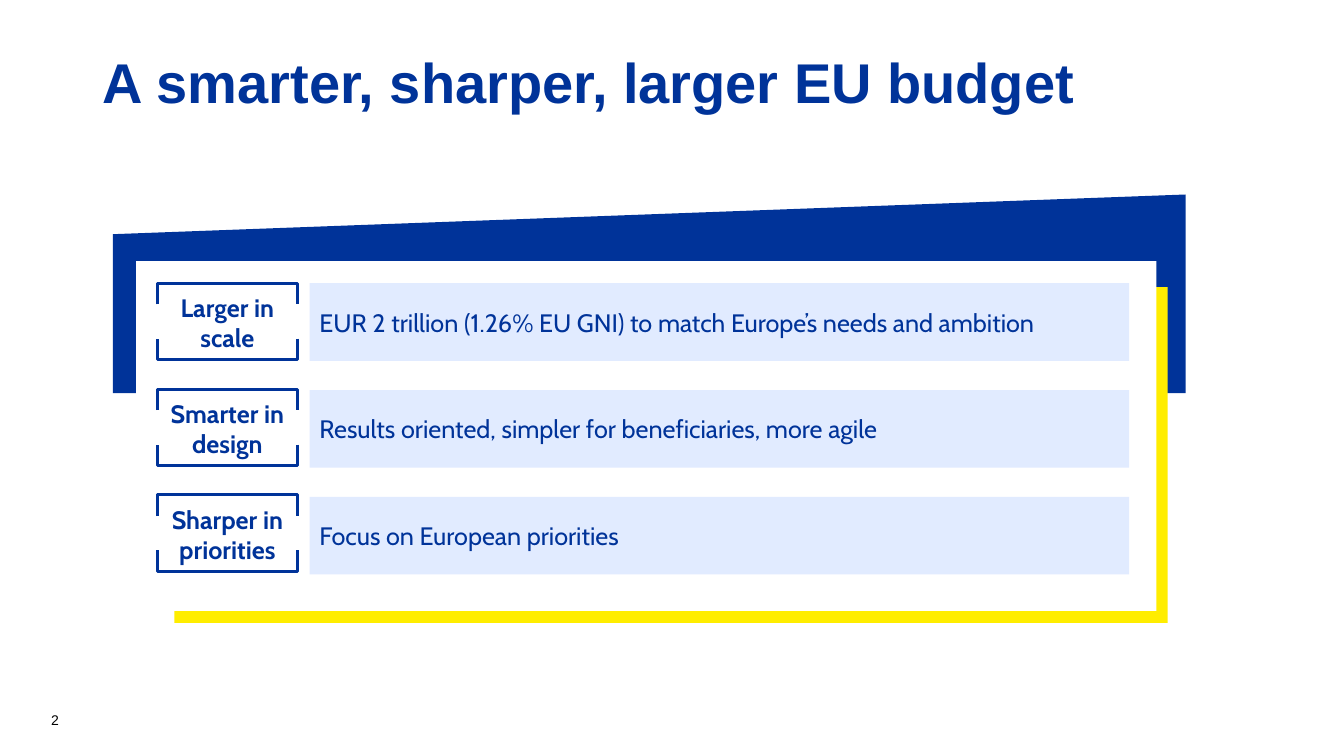
from pptx import Presentation
from pptx.dml.color import RGBColor
from pptx.enum.shapes import MSO_SHAPE
from pptx.enum.text import MSO_ANCHOR, PP_ALIGN
from pptx.util import Inches, Pt

COLORS = {
    "blue": "003399",
    "yellow": "FFED00",
    "white": "FFFFFF",
    "pale": "E1EBFF",
    "black": "000000",
}
ROWS = [
    ("Larger in scale", "EUR 2 trillion (1.26% EU GNI) to match Europe’s needs and ambition"),
    ("Smarter in design", "Results oriented, simpler for beneficiaries, more agile"),
    ("Sharper in priorities", "Focus on European priorities"),
]


def add_panel(kind, left, top, width, height, fill=None):
    panel = page.shapes.add_shape(kind, Inches(left), Inches(top), Inches(width), Inches(height))
    panel.shadow.inherit = False
    if fill:
        panel.fill.solid()
        panel.fill.fore_color.rgb = RGBColor.from_string(COLORS[fill])
        panel.line.fill.background()
    else:
        panel.fill.background()
        panel.line.color.rgb = RGBColor.from_string(COLORS["blue"])
        panel.line.width = Pt(2.25)
    return panel


def write(box, text, size, font, color, bold=False, align=PP_ALIGN.LEFT,
          anchor=MSO_ANCHOR.MIDDLE, side=0.1, edge=0.05):
    frame = box.text_frame
    frame.word_wrap = True
    frame.vertical_anchor = anchor
    frame.margin_left = frame.margin_right = Inches(side)
    frame.margin_top = frame.margin_bottom = Inches(edge)
    frame.text = text
    para = frame.paragraphs[0]
    para.alignment = align
    para.font.size = Pt(size)
    para.font.name = font
    para.font.bold = bold
    para.font.color.rgb = RGBColor.from_string(COLORS[color])
    return para


deck = Presentation()
deck.slide_width = Inches(13.33)
deck.slide_height = Inches(7.5)
page = deck.slides.add_slide(deck.slide_layouts[5])

title = page.shapes.title
title.left, title.top = Inches(0.92), Inches(0.4)
title.width, title.height = Inches(11.5), Inches(0.89)
heading = write(title, "A smarter, sharper, larger EU budget", 40, "Arial", "blue", bold=True)
heading.line_spacing = 0.9

add_panel(MSO_SHAPE.FLOWCHART_MANUAL_INPUT, 1.12, 1.93, 10.64, 1.97, "blue")
add_panel(MSO_SHAPE.RECTANGLE, 1.73, 2.85, 9.85, 3.33, "yellow")
add_panel(MSO_SHAPE.RECTANGLE, 1.35, 2.59, 10.12, 3.47, "white")

for index, (label, message) in enumerate(ROWS):
    bar = add_panel(MSO_SHAPE.RECTANGLE, 3.07, 2.81 + 1.06 * index, 8.13, 0.77, "pale")
    write(bar, message, 18, "Cabin", "blue", edge=0)

    offset = 1.05 * index
    box = page.shapes.add_textbox(Inches(1.56), Inches(2.85 + offset), Inches(1.39), Inches(0.67))
    write(box, label, 18, "Cabin", "blue", bold=True, align=PP_ALIGN.CENTER,
          anchor=MSO_ANCHOR.TOP, side=0)

    for top, rotation in ((2.77, 270), (2.22, 90)):
        bracket = add_panel(MSO_SHAPE.LEFT_BRACKET, 2.15, top + offset, 0.21, 1.39)
        bracket.adjustments[0] = 0
        bracket.rotation = rotation

number = page.shapes.add_textbox(Inches(0.41), Inches(6.87), Inches(3), Inches(0.4))
write(number, "2", 10, "Arial", "black", anchor=MSO_ANCHOR.BOTTOM)

deck.save("out.pptx")
